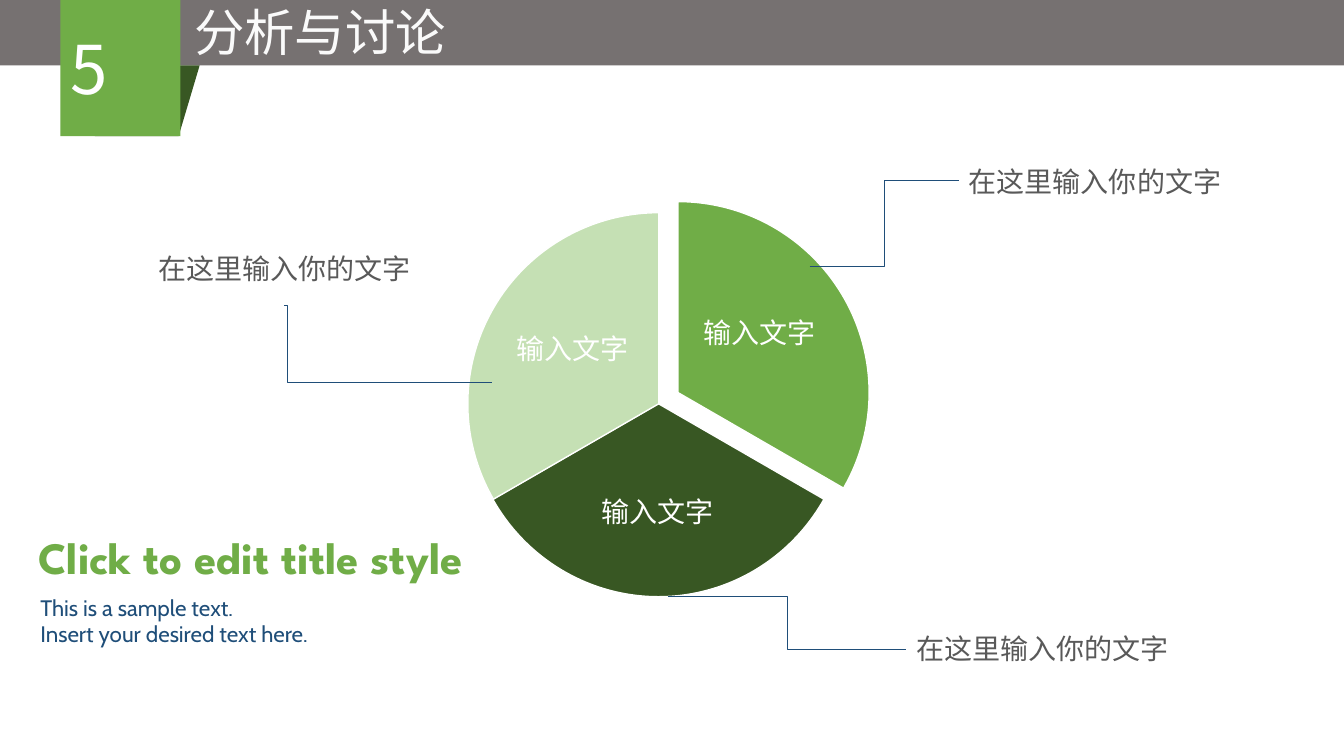
"""Build the analysis and discussion slide: a three-part pie with callouts."""
import dataclasses

import lxml.etree
import pptx
import pptx.dml.color
import pptx.enum.shapes
import pptx.enum.text
import pptx.oxml.ns
import pptx.util

Inches = pptx.util.Inches
Shapes = pptx.enum.shapes.MSO_SHAPE
Align = pptx.enum.text.PP_ALIGN
Anchor = pptx.enum.text.MSO_ANCHOR
qn = pptx.oxml.ns.qn


@dataclasses.dataclass(frozen=True)
class Theme:
    green: str = "70AD47"
    dark_green: str = "385723"
    pale_green: str = "C5E0B4"
    band: str = "767171"
    title: str = "FAFAFA"
    white: str = "FFFFFF"
    blue: str = "1F4E79"
    callout: str = "595959"
    chinese_font: str = "Noto Sans CJK SC"
    heading_font: str = "League Spartan"
    body_font: str = "Cabin"
    number_size: int = 48
    title_size: int = 36
    heading_size: int = 32
    label_size: int = 20
    body_size: int = 16


theme = Theme()


def add_filled(shapes, kind, box, color):
    shape = shapes.add_shape(kind, *map(Inches, box))
    shape.shadow.inherit = False
    shape.fill.solid()
    shape.fill.fore_color.rgb = pptx.dml.color.RGBColor.from_string(color)
    shape.line.fill.background()
    return shape


def write(shape, lines, font, size, color, align=Align.LEFT, anchor=Anchor.TOP, bold=False):
    frame = shape.text_frame
    frame.word_wrap = True
    frame.auto_size = pptx.enum.text.MSO_AUTO_SIZE.NONE
    frame.vertical_anchor = anchor
    frame.text = "\n".join(lines)
    for paragraph in frame.paragraphs:
        properties = paragraph._p.get_or_add_pPr()
        properties.set("marL", "0")
        properties.set("indent", "0")
        paragraph.alignment = align
        paragraph.space_before = pptx.util.Pt(0)
        lxml.etree.SubElement(properties, qn("a:buNone"))
        paragraph.font.size = pptx.util.Pt(size)
        paragraph.font.bold = bold
        paragraph.font.color.rgb = pptx.dml.color.RGBColor.from_string(color)
        paragraph.font.name = font
        east_asian = lxml.etree.SubElement(properties.find(qn("a:defRPr")), qn("a:ea"))
        east_asian.set("typeface", font)


presentation = pptx.Presentation()
presentation.slide_width = Inches(13.33)
presentation.slide_height = Inches(7.5)
slide = presentation.slides.add_slide(presentation.slide_layouts[1])
title = slide.shapes.title
body = slide.placeholders[1]

band = add_filled(slide.shapes, Shapes.RECTANGLE, (0, -0.01, 13.33, 0.66), theme.band)
title.element.addprevious(band.element)
title.left, title.top, title.width, title.height = map(Inches, (1.47, -0.04, 3.41, 0.7))
write(title, ["分析与讨论"], theme.chinese_font, theme.title_size, theme.title, Align.CENTER)

wedges = [
    ((4.83, 2, 3.79, 3.79), 270, theme.green, (6.89, 2.69, 1.28, 1.26)),
    ((4.64, 2.09, 3.78, 3.83), 30, theme.dark_green, (5.67, 4.5, 1.71, 1.18)),
    ((4.64, 2.11, 3.79, 3.79), 150, theme.pale_green, (5.04, 2.85, 1.28, 1.26)),
]
pie = slide.shapes.add_group_shape()
for wedge_box, start, color, label_box in wedges:
    wedge = add_filled(pie.shapes, Shapes.PIE, wedge_box, color)
    wedge.adjustments[0] = start * 0.6
    wedge.adjustments[1] = (start + 120) % 360 * 0.6
    wedge.line.color.rgb = pptx.dml.color.RGBColor.from_string(theme.white)
    wedge.line.width = pptx.util.Pt(1)
    label = pie.shapes.add_textbox(*map(Inches, label_box))
    frame = label.text_frame
    frame.margin_left = frame.margin_right = Inches(0.03)
    frame.margin_top = frame.margin_bottom = Inches(0.03)
    write(label, ["输入文字"], theme.chinese_font, theme.label_size, theme.white,
          Align.CENTER, Anchor.MIDDLE)
    frame.paragraphs[0].line_spacing = 0.9

callouts = [
    ((8.03, 2.64, 9.51, 1.79), 0.5, (9.51, 1.58, 3.82, 0.43)),
    ((6.63, 5.92, 8.99, 6.44), 0.5, (8.99, 6.22, 3.87, 0.43)),
    ((4.88, 3.79, 2.82, 3.03), 0.987, (1.47, 2.45, 3.27, 0.43)),
]
for ends, bend, text_box in callouts:
    connector = slide.shapes.add_connector(
        pptx.enum.shapes.MSO_CONNECTOR.ELBOW, *map(Inches, ends))
    connector.line.color.rgb = pptx.dml.color.RGBColor.from_string(theme.blue)
    connector.line.width = pptx.util.Pt(0.5)
    properties = connector.element.spPr
    lxml.etree.SubElement(properties, qn("a:effectLst"))
    guides = properties.find(qn("a:prstGeom")).find(qn("a:avLst"))
    lxml.etree.SubElement(guides, qn("a:gd"), name="adj1", fmla=f"val {round(bend * 100000)}")
    callout = slide.shapes.add_textbox(*map(Inches, text_box))
    write(callout, ["在这里输入你的文字"], theme.chinese_font, theme.label_size, theme.callout)

heading = slide.shapes.add_textbox(*map(Inches, (0.28, 5.21, 5.7, 0.63)))
write(heading, ["Click to edit title style"], theme.heading_font, theme.heading_size,
      theme.green, bold=True)
body.left, body.top, body.width, body.height = map(Inches, (0.3, 5.84, 6.67, 0.63))
write(body, ["This is a sample text.", "Insert your desired text here."],
      theme.body_font, theme.body_size, theme.blue)

ribbon = slide.shapes.add_group_shape()
add_filled(ribbon.shapes, Shapes.FLOWCHART_DATA, (0.94, 0.65, 1.04, 0.7), theme.dark_green)
number = add_filled(ribbon.shapes, Shapes.RECTANGLE, (0.6, -0.01, 1.19, 1.36), theme.green)
write(number, ["5"], theme.chinese_font, theme.number_size, theme.white, anchor=Anchor.MIDDLE)

presentation.save("out.pptx")
